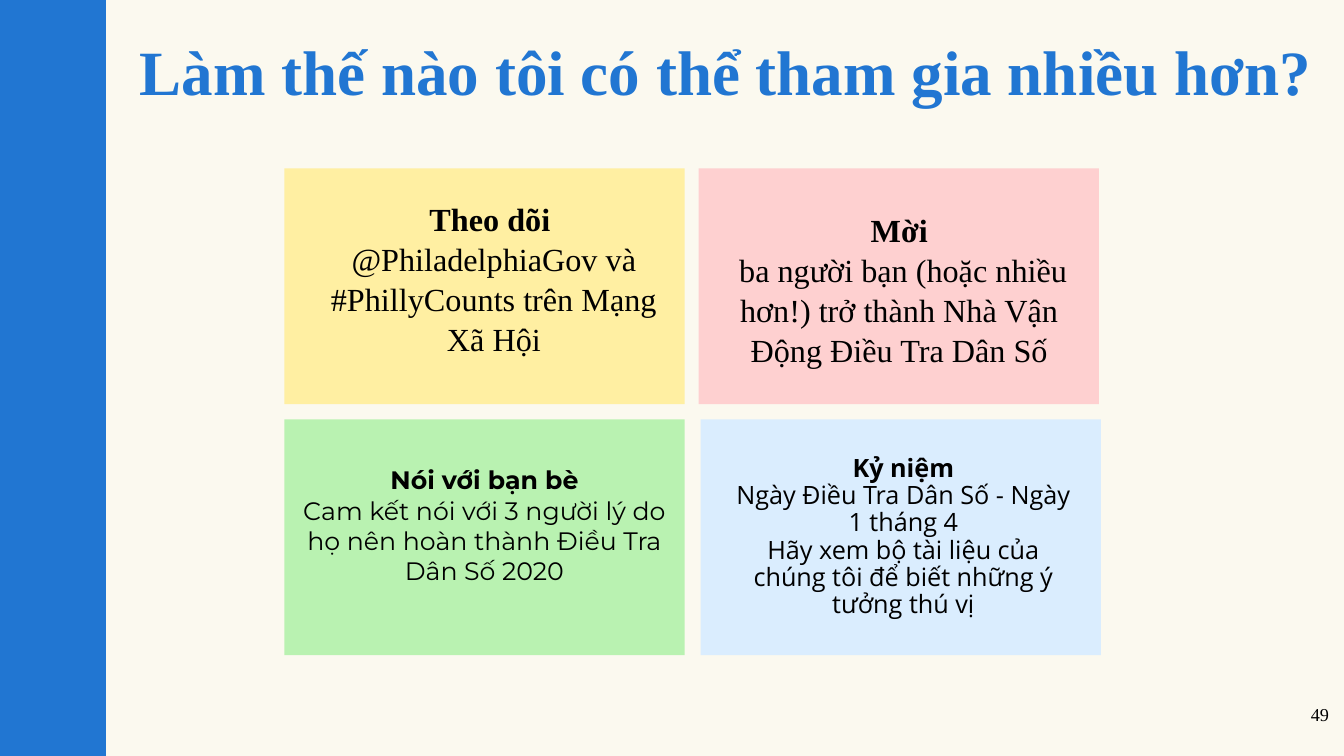
from pptx import Presentation
from pptx.dml.color import RGBColor
from pptx.enum.shapes import MSO_SHAPE as SHAPE
from pptx.enum.text import MSO_ANCHOR as ANCHOR, PP_ALIGN as ALIGN
from pptx.util import Inches, Pt

SERIF = "Times New Roman"
BLUE = "2176D2"


def paint(fill, color):
    fill.solid()
    fill.fore_color.rgb = RGBColor.from_string(color)


def add_text(at, lines, size, font, align, color="000000", spacing=1.0, bold_first=True):
    """Add a text box with one paragraph per line, the first one bold by default."""
    frame = slide.shapes.add_textbox(*map(Inches, at)).text_frame
    frame.word_wrap = True
    for number, line in enumerate(lines):
        paragraph = frame.paragraphs[0] if number == 0 else frame.add_paragraph()
        paragraph.alignment = align
        paragraph.line_spacing = spacing
        run = paragraph.add_run()
        run.text = line
        formats = {"name": font, "size": Pt(size), "bold": bold_first and number == 0}
        for key, value in formats.items():
            setattr(run.font, key, value)
        run.font.color.rgb = RGBColor.from_string(color)
    return frame


deck = Presentation()
deck.slide_width, deck.slide_height = Inches(13.33), Inches(7.5)
slide = deck.slides.add_slide(deck.slide_layouts[6])
paint(slide.background.fill, "FBF9EF")

panels = [
    ((0, 0, 1.05, 7.5), BLUE),
    ((2.82, 1.67, 3.97, 2.34), "FFEFA2"),
    ((6.93, 1.67, 3.97, 2.34), "FED0D0"),
    ((2.82, 4.16, 3.97, 2.34), "B9F2B1"),
    ((6.95, 4.16, 3.97, 2.34), "DAEDFE"),
]
for at, color in panels:
    panel = slide.shapes.add_shape(SHAPE.RECTANGLE, *map(Inches, at))
    paint(panel.fill, color)
    panel.line.fill.background()
    panel.shadow.inherit = False

title = add_text((1.29, 0.26, 12.53, 0.86), ["Làm thế nào tôi có thể tham gia nhiều hơn?"],
                 45, SERIF, ALIGN.LEFT, BLUE)
title.vertical_anchor = ANCHOR.BOTTOM

actions = [
    ((3.12, 1.91, 3.56, 1.8), 23, SERIF, 1.04,
     ["Theo dõi ", "@PhiladelphiaGov và #PhillyCounts trên Mạng Xã Hội"]),
    ((7.14, 2.02, 3.56, 2.04), 23, SERIF, 1.04,
     ["Mời", " ba người bạn (hoặc nhiều hơn!) trở thành Nhà Vận Động Điều Tra Dân Số"]),
    ((2.82, 4.56, 3.97, 1.55), 18, "Montserrat", 1.0,
     ["Nói với bạn bè", "Cam kết nói với 3 người lý do họ nên hoàn thành Điều Tra Dân Số 2020"]),
    ((7.18, 4.47, 3.56, 1.11), 18, "Open Sans", 0.9,
     ["Kỷ niệm", "Ngày Điều Tra Dân Số - Ngày 1 tháng 4",
      "Hãy xem bộ tài liệu của chúng tôi để biết những ý tưởng thú vị"]),
]
for at, size, font, spacing, lines in actions:
    add_text(at, lines, size, font, ALIGN.CENTER, spacing=spacing)

add_text((12.48, 6.93, 0.8, 0.57), ["49"], 13, SERIF, ALIGN.RIGHT, bold_first=False)

deck.save("out.pptx")
